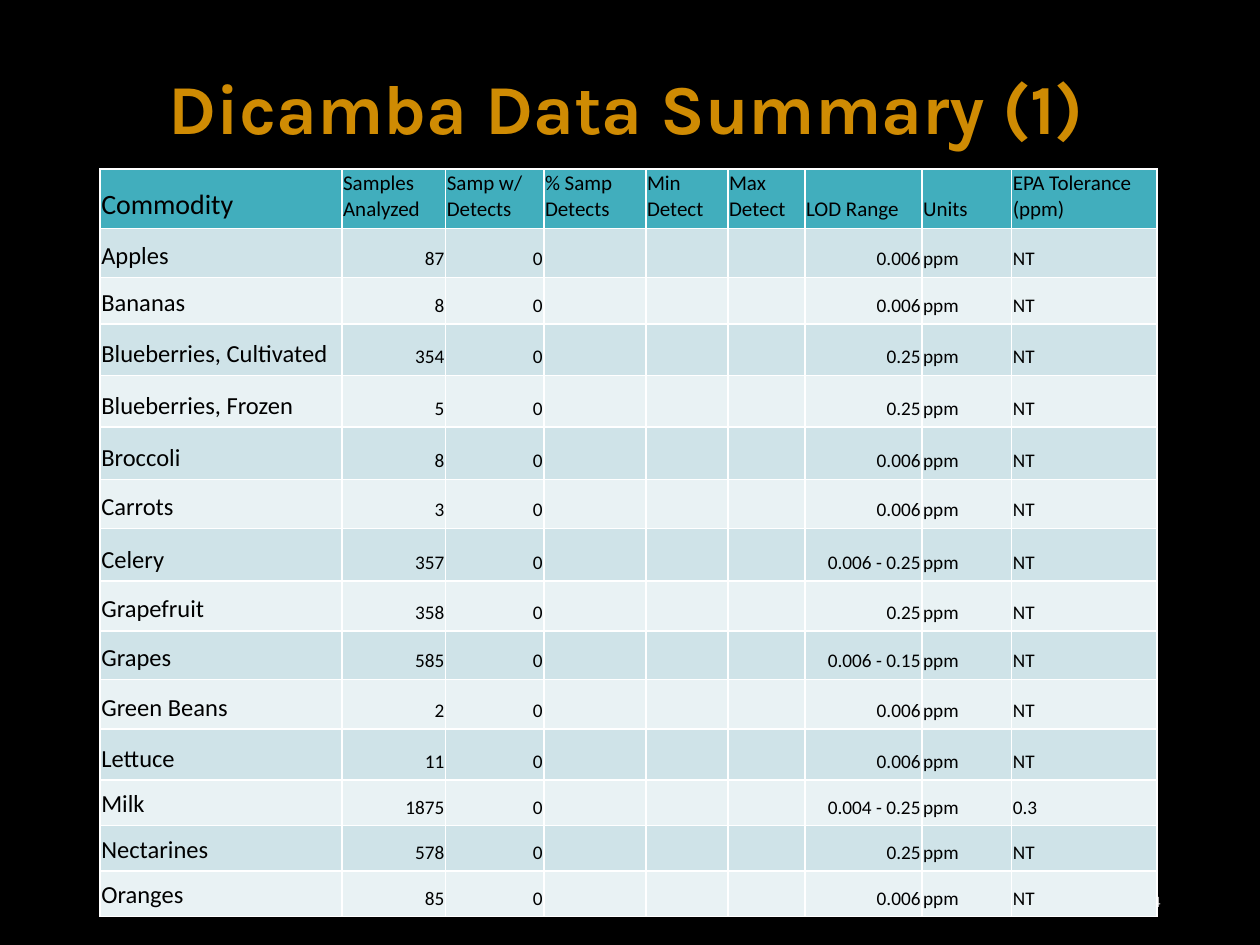
from typing import NamedTuple

from lxml.etree import SubElement
from pptx import Presentation
from pptx.dml.color import RGBColor
from pptx.enum.text import MSO_ANCHOR as Anchor, PP_ALIGN as Align
from pptx.oxml.ns import qn
from pptx.util import Pt


class Residue(NamedTuple):
    commodity: str
    samples: int
    lod_range: str
    height: float
    tolerance: str = "NT"


class CellStyle(NamedTuple):
    fill: str
    size: float
    align: Align = Align.LEFT


COLUMNS = {
    "Commodity": 138.2, "Samples Analyzed": 59.3, "Samp w/ Detects": 56.1,
    "% Samp Detects": 58.3, "Min Detect": 46.9, "Max Detect": 44,
    "LOD Range": 66.9, "Units": 51.3, "EPA Tolerance (ppm)": 83,
}
RIGHT_ALIGNED = {"Samples Analyzed", "Samp w/ Detects", "LOD Range"}
HEADER_HEIGHT = 34
HEADER_FILL = "41AEBD"
BAND_FILLS = ("CFE3E8", "E9F2F4")
RESIDUES = [
    Residue("Apples", 87, "0.006", 28),
    Residue("Bananas", 8, "0.006", 26.6),
    Residue("Blueberries, Cultivated", 354, "0.25", 29.5),
    Residue("Blueberries, Frozen", 5, "0.25", 29.5),
    Residue("Broccoli", 8, "0.006", 30),
    Residue("Carrots", 3, "0.006", 28),
    Residue("Celery", 357, "0.006 - 0.25", 30),
    Residue("Grapefruit", 358, "0.25", 28.5),
    Residue("Grapes", 585, "0.006 - 0.15", 27.7),
    Residue("Green Beans", 2, "0.006", 28.4),
    Residue("Lettuce", 11, "0.006", 29.3),
    Residue("Milk", 1875, "0.004 - 0.25", 26, "0.3"),
    Residue("Nectarines", 578, "0.25", 26),
    Residue("Oranges", 85, "0.006", 26),
]


def color(value: str) -> RGBColor:
    return RGBColor.from_string(value)


def write_text(shape, text: str, font_name: str, size: float, fill: str,
               align: Align, bold: bool = False) -> None:
    frame = shape.text_frame
    frame.word_wrap = True
    frame.vertical_anchor = Anchor.MIDDLE
    frame.text = text
    paragraph = frame.paragraphs[0]
    paragraph.alignment = align
    font = paragraph.runs[0].font
    font.name, font.size, font.bold = font_name, Pt(size), bold
    font.color.rgb = color(fill)


def write_cell(cell, text: str, style: CellStyle) -> None:
    cell.fill.solid()
    cell.fill.fore_color.rgb = color(style.fill)
    cell.vertical_anchor = Anchor.BOTTOM
    cell.margin_left = cell.margin_top = cell.margin_right = Pt(0.7)
    cell.margin_bottom = Pt(3.6)
    paragraph = cell.text_frame.paragraphs[0]
    paragraph.text = text
    paragraph.alignment = style.align
    for run in paragraph.runs:
        run.font.name, run.font.size, run.font.bold = "Calibri", Pt(style.size), False
        run.font.color.rgb = color("000000")
    if not text:
        SubElement(paragraph._p, qn("a:endParaRPr"), sz=str(int(style.size * 100)))


def add_residue_table(slide) -> None:
    heights = [HEADER_HEIGHT] + [residue.height for residue in RESIDUES]
    table = slide.shapes.add_table(
        len(heights), len(COLUMNS), Pt(57.2), Pt(96.5),
        Pt(sum(COLUMNS.values())), Pt(sum(heights))).table
    for column, width in zip(table.columns, COLUMNS.values()):
        column.width = Pt(width)
    for row, height in zip(table.rows, heights):
        row.height = Pt(height)
    for index, name in enumerate(COLUMNS):
        write_cell(table.cell(0, index), name,
                   CellStyle(HEADER_FILL, 12 if index else 16))
    for number, residue in enumerate(RESIDUES):
        values = (residue.commodity, str(residue.samples), "0", "", "", "",
                  residue.lod_range, "ppm", residue.tolerance)
        for index, (name, value) in enumerate(zip(COLUMNS, values)):
            align = Align.RIGHT if name in RIGHT_ALIGNED else Align.LEFT
            style = CellStyle(BAND_FILLS[number % 2], 11 if index else 14, align)
            write_cell(table.cell(number + 1, index), value, style)


def main() -> None:
    """Build the dicamba residue summary slide."""
    presentation = Presentation()
    presentation.slide_width, presentation.slide_height = Pt(720), Pt(540)
    slide = presentation.slides.add_slide(presentation.slide_layouts[5])
    slide.background.fill.solid()
    slide.background.fill.fore_color.rgb = color("000000")

    title = slide.shapes.title
    title.left, title.top, title.width, title.height = Pt(44.6), Pt(12.2), Pt(626.4), Pt(106.6)
    write_text(title, "Dicamba Data Summary (1)", "Karla", 40, "CF8B03", Align.CENTER, True)
    title.text_frame.paragraphs[0].line_spacing = 0.8

    page_number = slide.shapes.add_textbox(Pt(508.3), Pt(500.4), Pt(162), Pt(28.8))
    write_text(page_number, "14", "Calibri", 9, "EDEDED", Align.RIGHT)

    add_residue_table(slide)
    presentation.save("out.pptx")


if __name__ == "__main__":
    main()
